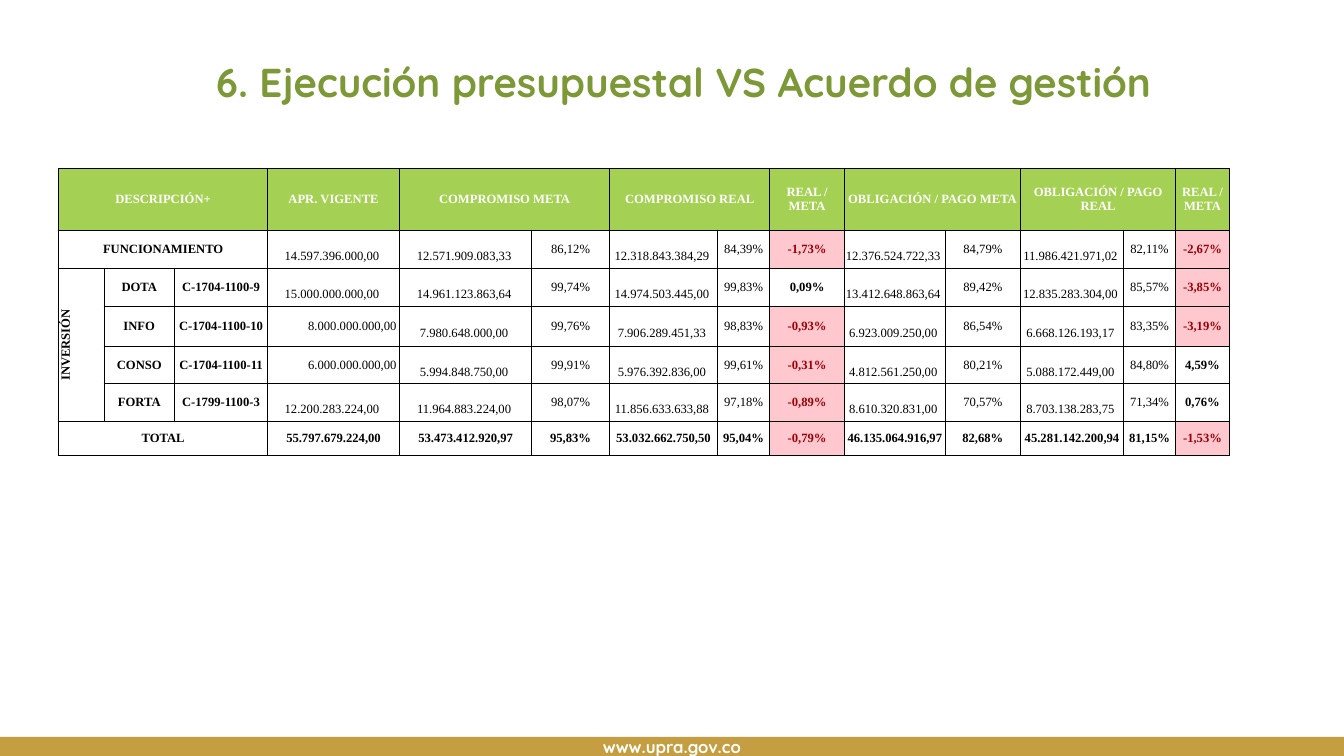
"""Build the slide that compares budget execution with the management agreement."""
from lxml import etree
from pptx import Presentation
from pptx.dml.color import RGBColor
from pptx.enum.shapes import MSO_SHAPE
from pptx.enum.text import MSO_ANCHOR, PP_ALIGN
from pptx.oxml.ns import qn
from pptx.util import Cm, Pt

RECTANGLE = MSO_SHAPE.RECTANGLE
MIDDLE = MSO_ANCHOR.MIDDLE
CENTER, RIGHT = PP_ALIGN.CENTER, PP_ALIGN.RIGHT

WHITE = RGBColor(0xFF, 0xFF, 0xFF)
BLACK = RGBColor(0x00, 0x00, 0x00)
GOLD = RGBColor(0xC5, 0x9E, 0x41)
TITLE_GREEN = RGBColor(0x7D, 0x98, 0x37)
HEADER_GREEN = RGBColor(0xA4, 0xD1, 0x53)
DARK_RED = RGBColor(0x9C, 0x00, 0x06)
PINK = RGBColor(0xFF, 0xC7, 0xCE)

COLUMN_WIDTHS = [1.14, 1.78, 2.34, 3.33, 3.33, 1.96, 2.72, 1.32, 1.88, 2.54, 1.9, 2.59, 1.32, 1.35]
ROW_HEIGHTS = [1.56, 0.96, 0.96, 1.01, 0.93, 0.96, 0.86]
ROWS = [
    ["DESCRIPCIÓN+", "", "", "APR. VIGENTE", "COMPROMISO META", "", "COMPROMISO REAL", "",
     "REAL / META", "OBLIGACIÓN / PAGO META", "", "OBLIGACIÓN / PAGO REAL", "", "REAL / META"],
    ["FUNCIONAMIENTO", "", "", "14.597.396.000,00", "12.571.909.083,33", "86,12%", "12.318.843.384,29",
     "84,39%", "-1,73%", "12.376.524.722,33", "84,79%", "11.986.421.971,02", "82,11%", "-2,67%"],
    ["INVERSIÓN", "DOTA", "C-1704-1100-9", "15.000.000.000,00", "14.961.123.863,64", "99,74%",
     "14.974.503.445,00", "99,83%", "0,09%", "13.412.648.863,64", "89,42%", "12.835.283.304,00",
     "85,57%", "-3,85%"],
    ["", "INFO", "C-1704-1100-10", "8.000.000.000,00", "7.980.648.000,00", "99,76%",
     "7.906.289.451,33", "98,83%", "-0,93%", "6.923.009.250,00", "86,54%", "6.668.126.193,17",
     "83,35%", "-3,19%"],
    ["", "CONSO", "C-1704-1100-11", "6.000.000.000,00", "5.994.848.750,00", "99,91%",
     "5.976.392.836,00", "99,61%", "-0,31%", "4.812.561.250,00", "80,21%", "5.088.172.449,00",
     "84,80%", "4,59%"],
    ["", "FORTA", "C-1799-1100-3", "12.200.283.224,00", "11.964.883.224,00", "98,07%",
     "11.856.633.633,88", "97,18%", "-0,89%", "8.610.320.831,00", "70,57%", "8.703.138.283,75",
     "71,34%", "0,76%"],
    ["TOTAL", "", "", "55.797.679.224,00", "53.473.412.920,97", "95,83%", "53.032.662.750,50",
     "95,04%", "-0,79%", "46.135.064.916,97", "82,68%", "45.281.142.200,94", "81,15%", "-1,53%"],
]
HEADER_ROW, TOTAL_ROW = 0, len(ROWS) - 1
AMOUNT_COLUMNS = {3, 4, 6, 9, 11}
RATIO_COLUMNS = {8, 13}
RIGHT_ALIGNED = {(3, 3), (4, 3)}
MERGES = [(0, 0, 0, 2), (0, 4, 0, 5), (0, 6, 0, 7), (0, 9, 0, 10), (0, 11, 0, 12),
          (1, 0, 1, 2), (2, 0, 5, 0), (6, 0, 6, 2)]


def write(text_frame, text, *, font, size, color, bold=True, align=CENTER, spacing=None):
    """Put one formatted paragraph in a text frame."""
    paragraph = text_frame.paragraphs[0]
    paragraph.alignment = align
    paragraph.line_spacing = spacing
    run = paragraph.add_run()
    run.text = text
    run.font.name = font
    run.font.size = Pt(size)
    run.font.bold = bold
    run.font.color.rgb = color


def add_borders(cell):
    """Draw a thin black line on the four sides of a cell."""
    properties = cell._tc.get_or_add_tcPr()
    for side in ("a:lnL", "a:lnR", "a:lnT", "a:lnB"):
        line = etree.SubElement(properties, qn(side), w=str(Pt(0.5)))
        fill = etree.SubElement(line, qn("a:solidFill"))
        etree.SubElement(fill, qn("a:srgbClr"), val=str(BLACK))


presentation = Presentation()
presentation.slide_width = Cm(33.87)
presentation.slide_height = Cm(19.05)
slide = presentation.slides.add_slide(presentation.slide_layouts[6])

footer = slide.shapes.add_shape(RECTANGLE, Cm(0), Cm(18.57), Cm(33.87), Cm(0.48))
footer.shadow.inherit = False
footer.fill.solid()
footer.fill.fore_color.rgb = GOLD
footer.line.fill.background()
footer.text_frame.vertical_anchor = MIDDLE
write(footer.text_frame, "www.upra.gov.co", font="Quicksand", size=12, color=WHITE)

title = slide.shapes.add_textbox(Cm(4.62), Cm(1.45), Cm(24.64), Cm(2.21))
title.text_frame.word_wrap = True
write(title.text_frame, "6. Ejecución presupuestal VS Acuerdo de gestión", font="Quicksand",
      size=28.8, color=TITLE_GREEN, align=RIGHT, spacing=0.9)

table = slide.shapes.add_table(len(ROWS), len(COLUMN_WIDTHS), Cm(1.48), Cm(4.24),
                               Cm(sum(COLUMN_WIDTHS)), Cm(sum(ROW_HEIGHTS))).table
table.first_row = False
table.horz_banding = False
for column, width in zip(table.columns, COLUMN_WIDTHS):
    column.width = Cm(width)
for row, height in zip(table.rows, ROW_HEIGHTS):
    row.height = Cm(height)
for top, left, bottom, right in MERGES:
    table.cell(top, left).merge(table.cell(bottom, right))

for row_index, row_texts in enumerate(ROWS):
    for column_index, text in enumerate(row_texts):
        cell = table.cell(row_index, column_index)
        is_header = row_index == HEADER_ROW
        is_negative = text.startswith("-")
        is_amount = column_index in AMOUNT_COLUMNS and HEADER_ROW < row_index < TOTAL_ROW
        is_right = (row_index, column_index) in RIGHT_ALIGNED
        cell.margin_left = cell.margin_bottom = Cm(0)
        cell.margin_right = Cm(0.08 if is_amount else 0)
        cell.margin_top = Cm(0.36 if is_amount and not is_right else 0)
        cell.vertical_anchor = MIDDLE
        add_borders(cell)
        if is_header or is_negative:
            cell.fill.solid()
            cell.fill.fore_color.rgb = HEADER_GREEN if is_header else PINK
        else:
            cell.fill.background()
        if text:
            write(cell.text_frame, text, font="Times New Roman", size=9,
                  color=WHITE if is_header else DARK_RED if is_negative else BLACK,
                  bold=row_index in (HEADER_ROW, TOTAL_ROW) or column_index < 3
                  or column_index in RATIO_COLUMNS,
                  align=RIGHT if is_right else CENTER)

table.cell(2, 0)._tc.get_or_add_tcPr().set("vert", "vert270")

presentation.save("out.pptx")
